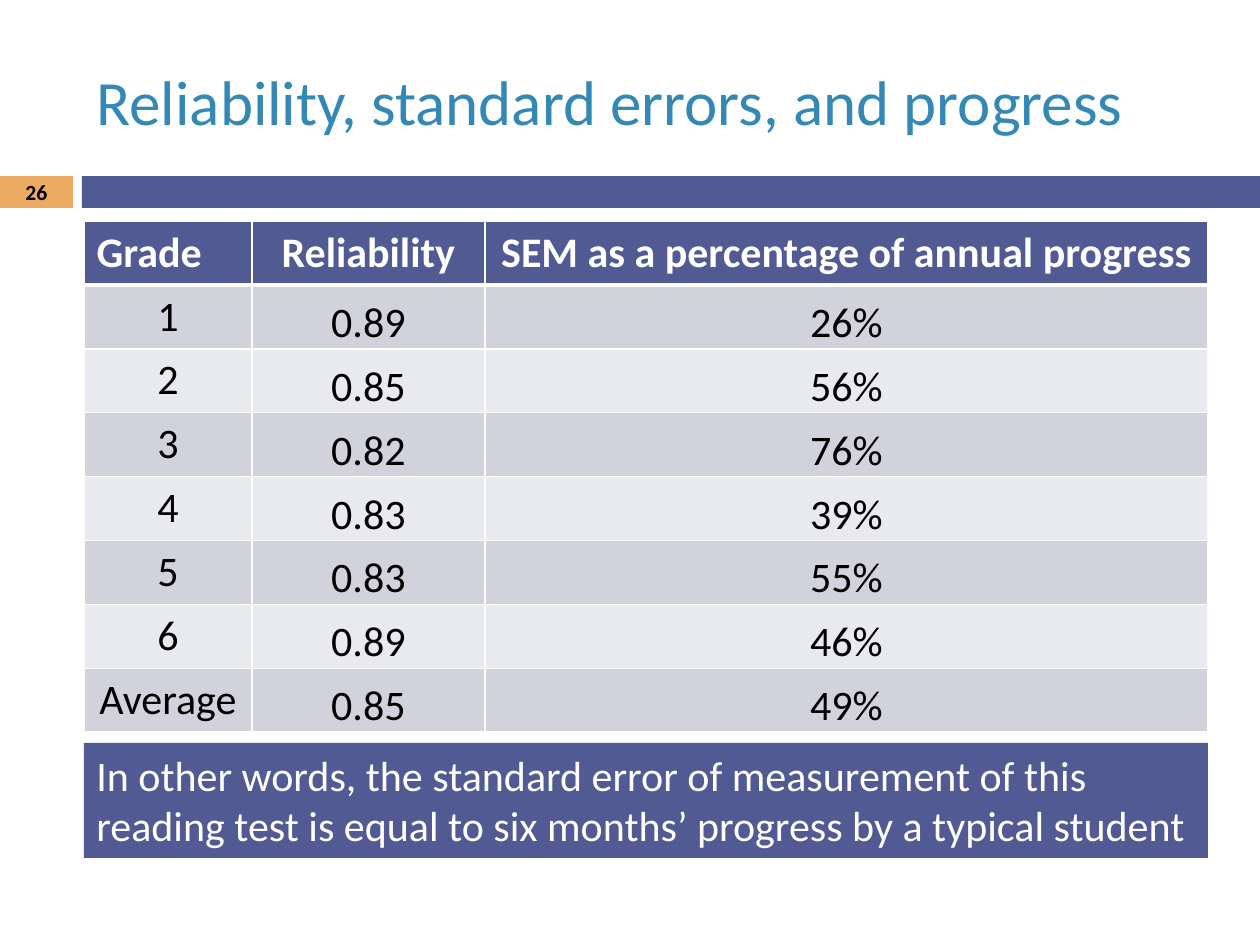
import pptx
import pptx.dml.color
import pptx.enum.shapes
import pptx.enum.text
import pptx.oxml
import pptx.oxml.ns
import pptx.util

SCALE = 914400 / 126
ALIGN = pptx.enum.text.PP_ALIGN
ANCHOR = pptx.enum.text.MSO_ANCHOR
INDIGO, WHITE, BLACK = "525A93", "FFFFFF", "000000"


def paint(target, color):
    if hasattr(target, "solid"):
        target.solid()
        target = target.fore_color
    target.rgb = pptx.dml.color.RGBColor.from_string(color)


def write(frame, text, size, color, bold=False, align=ALIGN.LEFT):
    frame.text = text
    paragraph = frame.paragraphs[0]
    paragraph.alignment = align
    font_format = {"name": "Calibri", "size": pptx.util.Pt(size), "bold": bold}
    for name, value in font_format.items():
        setattr(paragraph.font, name, value)
    paint(paragraph.font.color, color)


presentation = pptx.Presentation()
presentation.slide_width = round(1260 * SCALE)
presentation.slide_height = round(945 * SCALE)
slide = presentation.slides.add_slide(presentation.slide_layouts[5])

bars = []
for box, color in [
    ((0, 176, 73, 32), "EDAA61"),
    ((82, 176, 1178, 32), INDIGO),
    ((84, 743, 1124, 115), INDIGO),
]:
    bar = slide.shapes.add_shape(
        pptx.enum.shapes.MSO_SHAPE.RECTANGLE, *[round(length * SCALE) for length in box]
    )
    bar.shadow.inherit = False
    paint(bar.fill, color)
    bar.line.fill.background()
    bars.append(bar)
number_bar, header_bar, conclusion_bar = bars

title = slide.shapes.title
title_box = {"left": 84, "top": 32, "width": 1124, "height": 136}
for name, value in title_box.items():
    setattr(title, name, round(value * SCALE))
write(title.text_frame, "Reliability, standard errors, and progress", 36, "3488B6")
write(number_bar.text_frame, "26", 12.4, BLACK, True, ALIGN.CENTER)
write(
    conclusion_bar.text_frame,
    "In other words, the standard error of measurement of this reading test "
    "is equal to six months’ progress by a typical student",
    24,
    WHITE,
)
for shape, anchor in [
    (title, ANCHOR.MIDDLE),
    (number_bar, ANCHOR.MIDDLE),
    (conclusion_bar, ANCHOR.TOP),
]:
    frame_format = {
        "word_wrap": True,
        "auto_size": pptx.enum.text.MSO_AUTO_SIZE.NONE,
        "vertical_anchor": anchor,
    }
    for name, value in frame_format.items():
        setattr(shape.text_frame, name, value)

rows = [
    ("Grade", "Reliability", "SEM as a percentage of annual progress"),
    ("1", "0.89", "26%"),
    ("2", "0.85", "56%"),
    ("3", "0.82", "76%"),
    ("4", "0.83", "39%"),
    ("5", "0.83", "55%"),
    ("6", "0.89", "46%"),
    ("Average", "0.85", "49%"),
]
column_widths = [168, 233, 723]
table = slide.shapes.add_table(
    len(rows),
    len(column_widths),
    *[round(length * SCALE) for length in (84, 221, sum(column_widths), 63 * len(rows))],
).table
for column, width in zip(table.columns, column_widths):
    column.width = round(width * SCALE)

value_format = {
    "vertical_anchor": ANCHOR.BOTTOM,
    "margin_left": round(SCALE),
    "margin_top": round(SCALE),
    "margin_right": round(SCALE),
    "margin_bottom": 0,
}
namespace = pptx.oxml.ns.nsdecls("a")
for row_index, values in enumerate(rows):
    header = row_index == 0
    for column_index, value in enumerate(values):
        cell = table.cell(row_index, column_index)
        align = ALIGN.LEFT if header and column_index == 0 else ALIGN.CENTER
        write(cell.text_frame, value, 24, WHITE if header else BLACK, header, align)
        if not header and column_index > 0:
            for name, setting in value_format.items():
                setattr(cell, name, setting)
        for side in "LRTB":
            thick = (header and side == "B") or (row_index == 1 and side == "T")
            border = pptx.oxml.parse_xml(
                f'<a:ln{side} {namespace} w="{pptx.util.Pt(3 if thick else 1)}">'
                f'<a:solidFill><a:srgbClr val="{WHITE}"/></a:solidFill></a:ln{side}>'
            )
            cell._tc.get_or_add_tcPr().append(border)
        paint(cell.fill, INDIGO if header else ("E9EAEE", "D1D2DC")[row_index % 2])

presentation.save("out.pptx")
